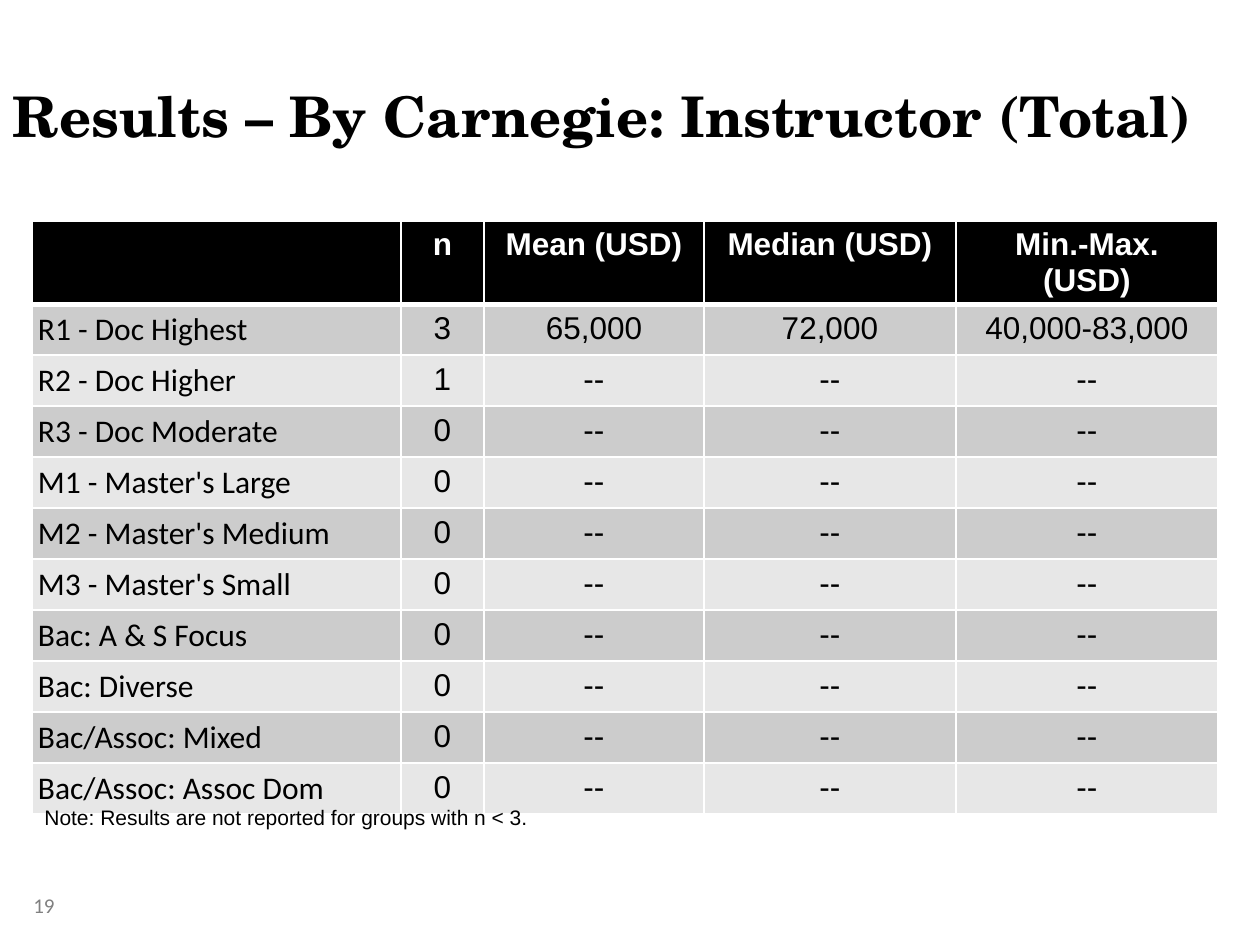
"""Build the slide of instructor salaries by Carnegie class."""
from dataclasses import dataclass

from lxml.etree import SubElement
from pptx import Presentation
from pptx.dml.color import RGBColor
from pptx.enum.text import MSO_ANCHOR, MSO_AUTO_SIZE, PP_ALIGN
from pptx.oxml.ns import qn
from pptx.util import Emu, Pt

COLORS = {
    "black": "000000",
    "white": "FFFFFF",
    "gray": "808080",
    "dark_band": "CCCCCC",
    "light_band": "E7E7E7",
}
PX_PER_INCH = 126
ROW_HEIGHT = 51
COLUMN_WIDTHS = (369, 83, 220, 252, 262)
HEADERS = ("", "n", "Mean (USD)", "Median (USD)", "Min.-Max. (USD)")


@dataclass(frozen=True)
class Group:
    label: str
    n: int = 0
    mean: str = "--"
    median: str = "--"
    span: str = "--"


@dataclass(frozen=True)
class Note:
    text: str
    box: tuple[int, int, int, int]
    font: str
    color: str


GROUPS = (
    Group("R1 - Doc Highest", 3, "65,000", "72,000", "40,000-83,000"),
    Group("R2 - Doc Higher", 1),
    Group("R3 - Doc Moderate"),
    Group("M1 - Master's Large"),
    Group("M2 - Master's Medium"),
    Group("M3 - Master's Small"),
    Group("Bac: A & S Focus"),
    Group("Bac: Diverse"),
    Group("Bac/Assoc: Mixed"),
    Group("Bac/Assoc: Assoc Dom"),
)
NOTES = (
    Note("19", (21, 886, 116, 69), "Calibri", "gray"),
    Note("Note: Results are not reported for groups with n < 3.",
         (32, 798, 1150, 38), "Arial", "black"),
)


def px(n: int) -> Emu:
    """Turn pixels into EMU."""
    return Emu(round(n * 914400 / PX_PER_INCH))


def rgb(name: str) -> RGBColor:
    """Look up a named colour."""
    return RGBColor.from_string(COLORS[name])


def write(tf, text: str, *, font: str = "Arial", size: int = 18, color: str = "black",
          bold: bool = False, align=PP_ALIGN.LEFT, anchor=MSO_ANCHOR.TOP) -> None:
    """Put one formatted paragraph into a text frame."""
    tf.word_wrap = True
    tf.vertical_anchor = anchor
    p = tf.paragraphs[0]
    p.alignment = align
    r = p.add_run()
    r.text = text
    r.font.name, r.font.size, r.font.bold = font, Pt(size), bold
    r.font.color.rgb = rgb(color)


def add_title(s, text: str) -> None:
    """Place and fill the title placeholder."""
    sp = s.shapes.title
    sp.left, sp.top, sp.width, sp.height = map(px, (0, 38, 1260, 117))
    sp.text_frame.auto_size = MSO_AUTO_SIZE.NONE
    write(sp.text_frame, text, font="TeX Gyre Schola", size=32, bold=True,
          anchor=MSO_ANCHOR.BOTTOM)


def add_note(s, note: Note) -> None:
    """Add a small text box."""
    sp = s.shapes.add_textbox(*map(px, note.box))
    write(sp.text_frame, note.text, font=note.font, size=12, color=note.color)


def style_cell(cell, fill: str, top: int = 1, bottom: int = 1) -> None:
    """Give a cell white borders and a solid fill."""
    tc_pr = cell._tc.get_or_add_tcPr()
    for side, width in (("L", 1), ("R", 1), ("T", top), ("B", bottom)):
        ln = SubElement(tc_pr, qn(f"a:ln{side}"), w=str(Pt(width)))
        solid = SubElement(ln, qn("a:solidFill"))
        SubElement(solid, qn("a:srgbClr"), val=COLORS["white"])
    cell.fill.solid()
    cell.fill.fore_color.rgb = rgb(fill)


def add_header(table) -> None:
    """Fill the black header row."""
    for cell, text in zip(table.rows[0].cells, HEADERS):
        style_cell(cell, "black", bottom=3)
        if text:
            write(cell.text_frame, text, color="white", bold=True, align=PP_ALIGN.CENTER)


def add_group(table, row: int, group: Group) -> None:
    """Fill one banded row."""
    label, *values = table.rows[row].cells
    for cell in (label, *values):
        style_cell(cell, "dark_band" if row % 2 else "light_band", top=3 if row == 1 else 1)
    label.margin_left = label.margin_right = px(6)
    label.margin_top = label.margin_bottom = 0
    write(label.text_frame, group.label, font="Calibri")
    label.vertical_anchor = MSO_ANCHOR.MIDDLE
    for cell, value in zip(values, (group.n, group.mean, group.median, group.span)):
        write(cell.text_frame, str(value), align=PP_ALIGN.CENTER)


def add_results(s) -> None:
    """Add the table of results."""
    rows = len(GROUPS) + 1
    box = (32, 221, sum(COLUMN_WIDTHS), rows * ROW_HEIGHT)
    table = s.shapes.add_table(rows, len(HEADERS), *map(px, box)).table
    for column, width in zip(table.columns, COLUMN_WIDTHS):
        column.width = px(width)
    for row in table.rows:
        row.height = px(ROW_HEIGHT)
    add_header(table)
    for i, group in enumerate(GROUPS, 1):
        add_group(table, i, group)


def main() -> None:
    """Build and save the slide."""
    prs = Presentation()
    prs.slide_width, prs.slide_height = px(1260), px(945)
    s = prs.slides.add_slide(prs.slide_layouts[5])
    add_title(s, "Results – By Carnegie: Instructor (Total)")
    add_results(s)
    for note in NOTES:
        add_note(s, note)
    prs.save("out.pptx")


if __name__ == "__main__":
    main()
